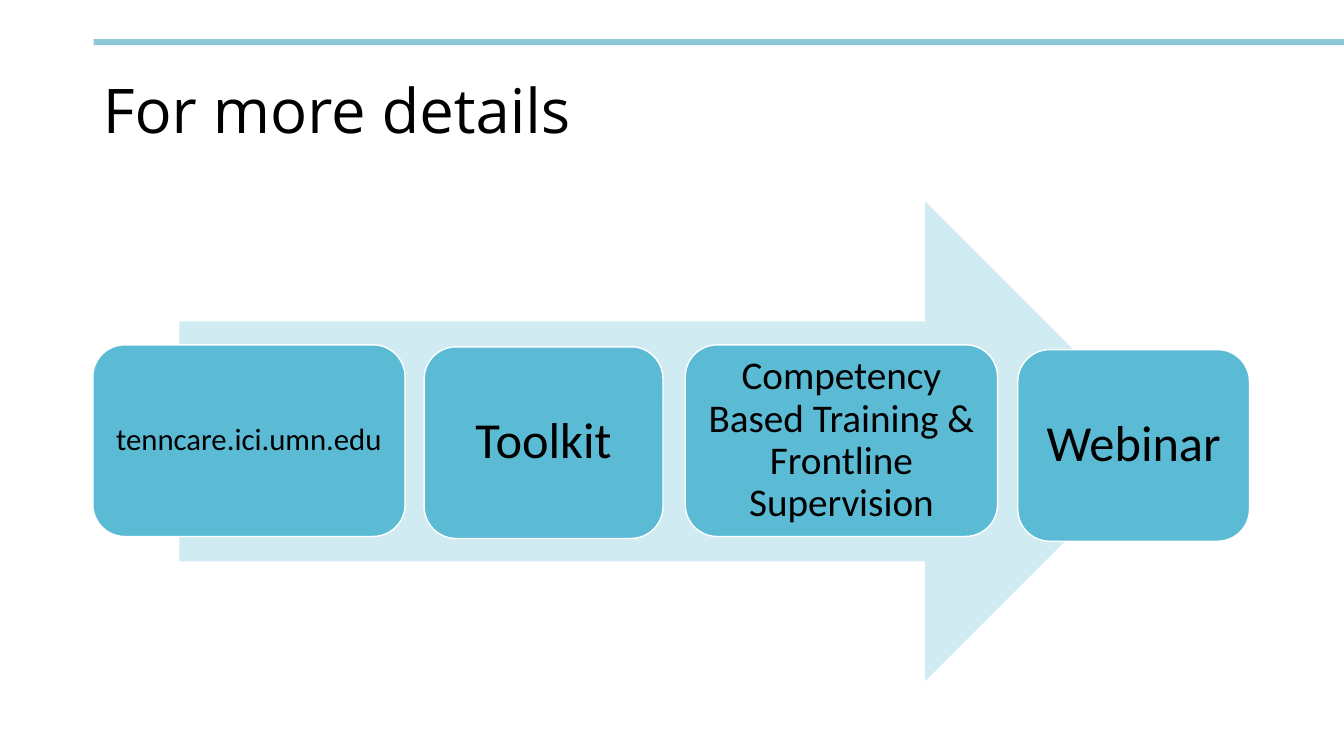
from typing import NamedTuple

from pptx import Presentation
from pptx.dml.color import RGBColor
from pptx.enum.shapes import MSO_SHAPE
from pptx.enum.text import MSO_ANCHOR, PP_ALIGN
from pptx.util import Cm, Pt

BLACK, WHITE = "000000", "FFFFFF"
RULE, PALE, BLUE = "8EC7D7", "D0EBF2", "5BBBD5"
STEP_HIGH = 4.83


class Step(NamedTuple):
    text: str
    left: float
    top: float
    width: float
    size: int
    inset: float


STEPS = [
    Step("tenncare.ici.umn.edu", 2.34, 8.69, 7.87, 22, 0.23),
    Step("Toolkit", 10.69, 8.74, 6.02, 36, 0.38),
    Step("Competency Based Training & Frontline Supervision",
         17.27, 8.69, 7.87, 28, 0.3),
    Step("Webinar", 25.65, 8.81, 5.84, 36, 0.38),
]


def color(code: str) -> RGBColor:
    return RGBColor.from_string(code)


def write(shape, text: str, *, font: str, size: int, align: PP_ALIGN,
          inset: float = 0.25) -> None:
    frame = shape.text_frame
    frame.word_wrap = True
    frame.vertical_anchor = MSO_ANCHOR.MIDDLE
    frame.margin_left = frame.margin_right = Cm(inset)
    frame.margin_top = frame.margin_bottom = Cm(min(inset, 0.38))
    frame.text = text
    para = frame.paragraphs[0]
    para.alignment = align
    para.line_spacing = 0.9
    face = para.runs[0].font
    face.name, face.size = font, Pt(size)
    face.color.rgb = color(BLACK)


def draw(slide, kind: MSO_SHAPE, left: float, top: float, width: float,
         high: float, fill: str, line: str | None = None):
    shape = slide.shapes.add_shape(kind, Cm(left), Cm(top), Cm(width), Cm(high))
    shape.shadow.inherit = False
    shape.fill.solid()
    shape.fill.fore_color.rgb = color(fill)
    if line:
        shape.line.color.rgb = color(line)
        shape.line.width = Pt(1)
    else:
        shape.line.fill.background()
    return shape


def main() -> None:
    deck = Presentation()
    deck.slide_width, deck.slide_height = Cm(33.87), Cm(19.05)
    slide = deck.slides.add_slide(deck.slide_layouts[5])

    title = slide.shapes.title
    title.left, title.top = Cm(2.34), Cm(1.02)
    title.width, title.height = Cm(29.21), Cm(3.68)
    write(title, "For more details", font="Open Sans", size=44,
          align=PP_ALIGN.LEFT)

    draw(slide, MSO_SHAPE.RECTANGLE, 2.36, 0.99, 31.51, 0.15, RULE)
    draw(slide, MSO_SHAPE.RIGHT_ARROW, 4.52, 5.08, 24.84, 12.09, PALE)
    for step in STEPS:
        box = draw(slide, MSO_SHAPE.ROUNDED_RECTANGLE, step.left, step.top,
                   step.width, STEP_HIGH, BLUE, WHITE)
        write(box, step.text, font="Calibri", size=step.size,
              align=PP_ALIGN.CENTER, inset=step.inset)

    deck.save("out.pptx")


if __name__ == "__main__":
    main()
